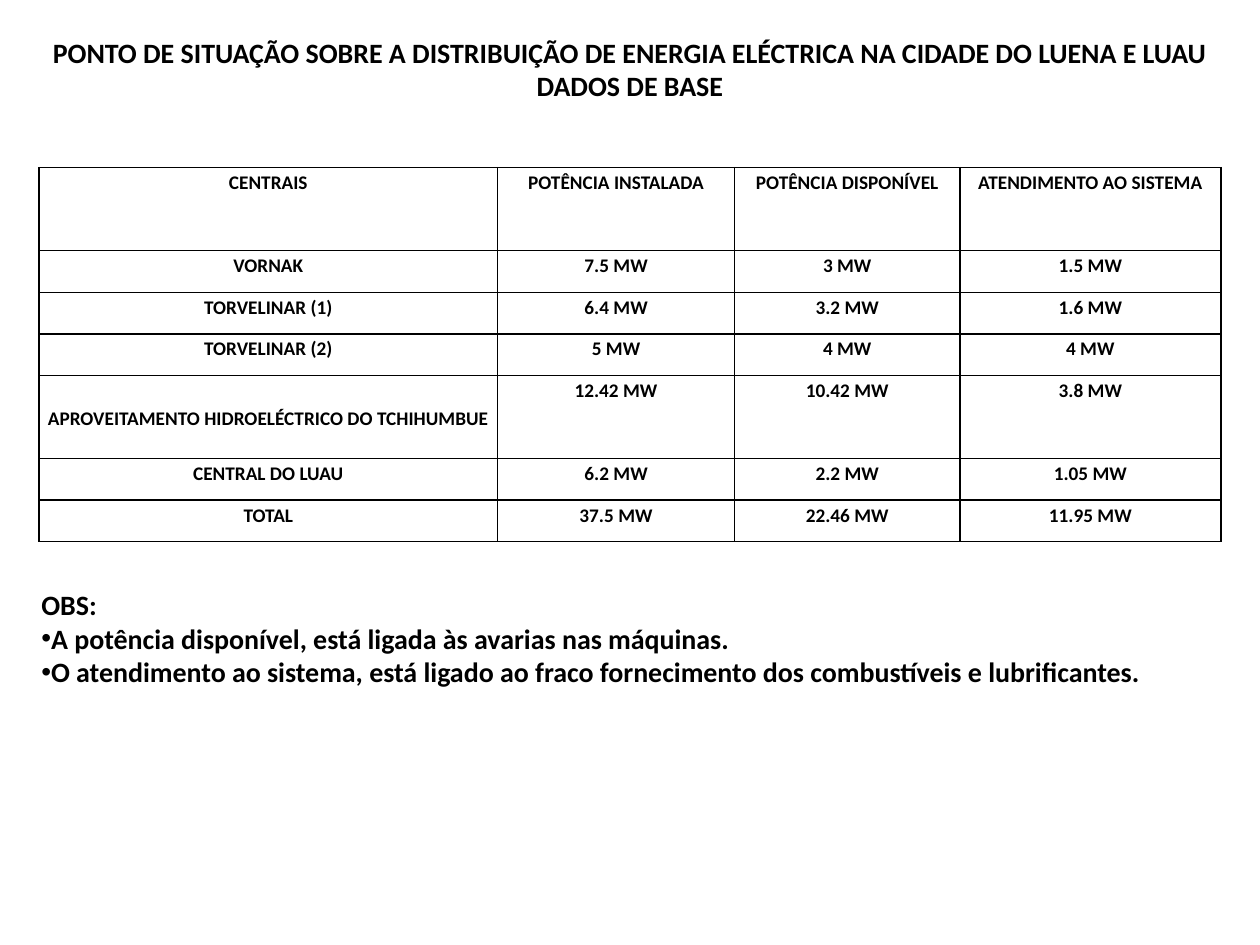
from lxml import etree
from pptx import Presentation
from pptx.dml.color import RGBColor
from pptx.enum.text import MSO_ANCHOR, PP_ALIGN
from pptx.oxml.ns import qn
from pptx.util import Inches, Pt

CENTER, LEFT = PP_ALIGN.CENTER, PP_ALIGN.LEFT
TOP, MIDDLE = MSO_ANCHOR.TOP, MSO_ANCHOR.MIDDLE

TITLE = [
    "PONTO DE SITUAÇÃO SOBRE A DISTRIBUIÇÃO DE ENERGIA ELÉCTRICA NA CIDADE DO LUENA E LUAU",
    "DADOS DE BASE",
]
HEADERS = ["CENTRAIS", "POTÊNCIA INSTALADA", "POTÊNCIA DISPONÍVEL", "ATENDIMENTO AO SISTEMA"]
HYDRO_PLANT = "APROVEITAMENTO HIDROELÉCTRICO DO TCHIHUMBUE"
PLANTS = [
    ("VORNAK", "7.5", "3", "1.5"),
    ("TORVELINAR (1)", "6.4", "3.2", "1.6"),
    ("TORVELINAR (2)", "5", "4", "4"),
    (HYDRO_PLANT, "12.42", "10.42", "3.8"),
    ("CENTRAL DO LUAU", "6.2", "2.2", "1.05"),
    ("TOTAL", "37.5", "22.46", "11.95"),
]
NOTES_HEADING = "OBS:"
NOTES = [
    "A potência disponível, está ligada às avarias nas máquinas.",
    "O atendimento ao sistema, está ligado ao fraco fornecimento dos combustíveis e lubrificantes.",
]

THEME = {"font": "Calibri", "ink": "000000", "text_size": 16, "table_size": 11, "border": 1}
COLUMN_WIDTHS = [3.64, 1.88, 1.79, 2.07]
ROW_HEIGHT = 0.33
TALL_ROWS = ("CENTRAIS", HYDRO_PLANT)


def write(paragraph, text, size, alignment):
    paragraph.alignment = alignment
    run = paragraph.add_run()
    run.text = text
    run.font.name = THEME["font"]
    run.font.size = Pt(size)
    run.font.bold = True
    run.font.color.rgb = RGBColor.from_string(THEME["ink"])


def add_text(slide, box, lines, alignment, anchor):
    shape = slide.shapes.add_textbox(*map(Inches, box))
    frame = shape.text_frame
    frame.word_wrap = True
    frame.vertical_anchor = anchor
    for index, line in enumerate(lines):
        paragraph = frame.add_paragraph() if index else frame.paragraphs[0]
        write(paragraph, line, THEME["text_size"], alignment)
    return frame


def add_bullet(paragraph):
    properties = paragraph._p.get_or_add_pPr()
    etree.SubElement(properties, qn("a:buFont"), typeface="Arial")
    etree.SubElement(properties, qn("a:buChar"), char="•")


def add_borders(cell):
    properties = cell._tc.get_or_add_tcPr()
    for side in ("lnL", "lnR", "lnT", "lnB"):
        line = etree.SubElement(properties, qn(f"a:{side}"), w=str(Pt(THEME["border"])))
        fill = etree.SubElement(line, qn("a:solidFill"))
        etree.SubElement(fill, qn("a:srgbClr"), val=THEME["ink"])


def fill_cell(cell, text):
    cell.margin_left = cell.margin_right = Inches(0.05)
    cell.margin_top = cell.margin_bottom = 0
    cell.vertical_anchor = MIDDLE if text == HYDRO_PLANT else TOP
    paragraph = cell.text_frame.paragraphs[0]
    paragraph.line_spacing = 1.15
    write(paragraph, text, THEME["table_size"], CENTER)
    add_borders(cell)
    cell.fill.background()


def add_power_table(slide):
    rows = [HEADERS] + [[name] + [f"{value} MW" for value in values] for name, *values in PLANTS]
    heights = [ROW_HEIGHT * (2 if row[0] in TALL_ROWS else 1) for row in rows]
    box = (0.31, 1.33, sum(COLUMN_WIDTHS), sum(heights))
    table = slide.shapes.add_table(len(rows), len(HEADERS), *map(Inches, box)).table
    table.first_row = table.horz_banding = False
    for column, width in zip(table.columns, COLUMN_WIDTHS):
        column.width = Inches(width)
    for table_row, height, texts in zip(table.rows, heights, rows):
        table_row.height = Inches(height)
        for cell, text in zip(table_row.cells, texts):
            fill_cell(cell, text)


def main():
    presentation = Presentation()
    presentation.slide_width, presentation.slide_height = Inches(10), Inches(7.5)
    slide = presentation.slides.add_slide(presentation.slide_layouts[6])
    add_power_table(slide)
    add_text(slide, (0, 0.23, 10, 0.91), TITLE, CENTER, TOP)
    notes = add_text(slide, (0.23, 4.61, 9.38, 0.91), [NOTES_HEADING] + NOTES, LEFT, MIDDLE)
    for paragraph in notes.paragraphs[1:]:
        add_bullet(paragraph)
    presentation.save("out.pptx")


if __name__ == "__main__":
    main()
